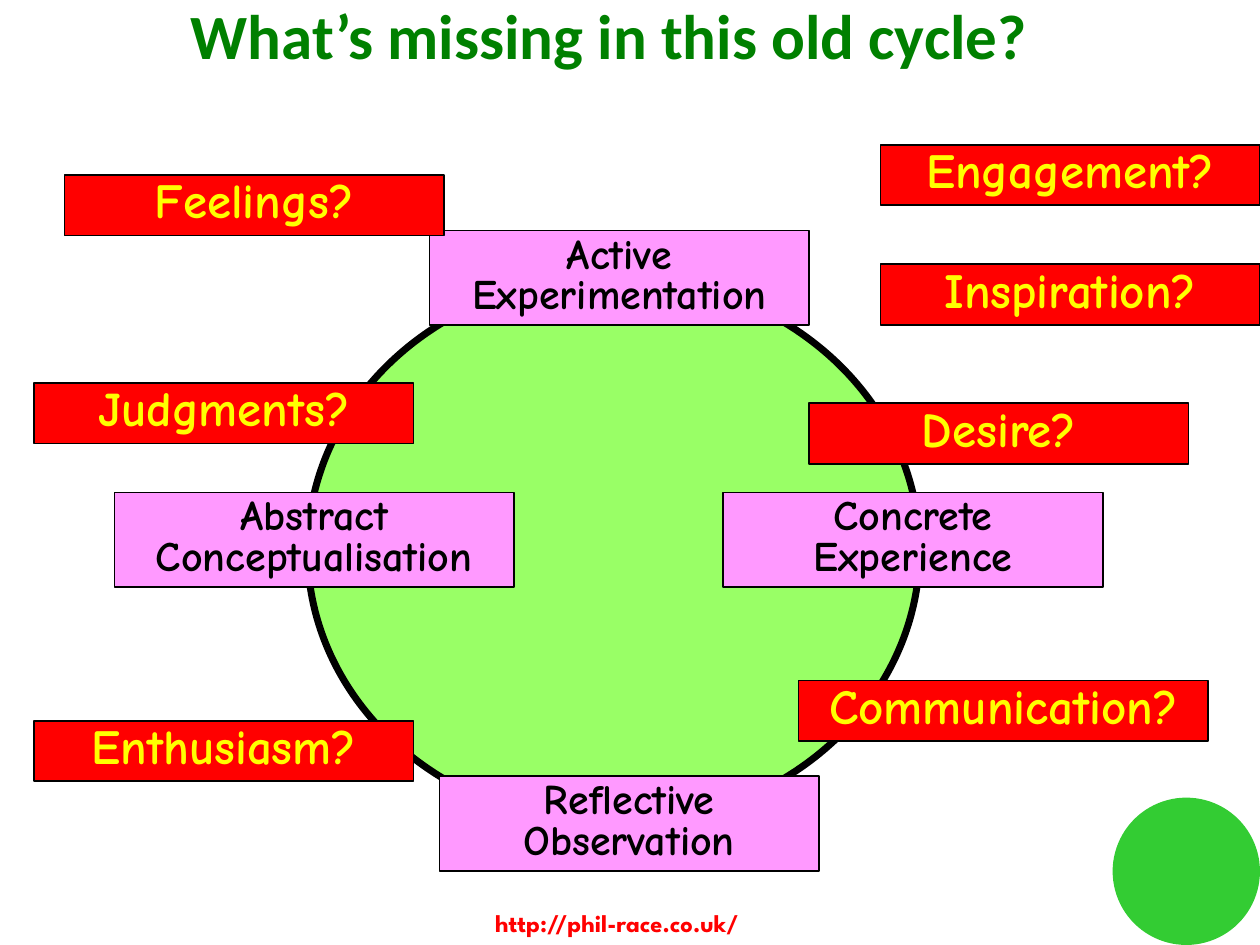
import pptx
import pptx.util
import pptx.dml.color
import pptx.enum.shapes
import pptx.enum.text
from dataclasses import dataclass

Cm, Pt = pptx.util.Cm, pptx.util.Pt
RGB = pptx.dml.color.RGBColor.from_string
MSO = pptx.enum.shapes.MSO_SHAPE
ALIGN = pptx.enum.text.PP_ALIGN
ANCHOR = pptx.enum.text.MSO_ANCHOR
AUTO = pptx.enum.text.MSO_AUTO_SIZE


@dataclass
class Theme:
    title: str = "008000"
    cycle: str = "99FF66"
    stage: str = "FF99FF"
    missing: str = "FF0000"
    missing_text: str = "FFFF00"
    ink: str = "000000"
    emblem: str = "33CC33"
    title_font: str = "Calibri"
    body_font: str = "Comic Neue"
    link_font: str = "League Spartan"
    title_size: int = 36
    missing_size: int = 28
    stage_size: int = 24
    link_size: int = 14


T = Theme()


def add_run(p, text, font, size, color):
    r = p.add_run()
    r.text = text
    r.font.name = font
    r.font.size = Pt(size)
    r.font.bold = True
    r.font.color.rgb = RGB(color)


def add_solid(s, kind, x, y, w, h, fill, line):
    sp = s.shapes.add_shape(kind, Cm(x), Cm(y), Cm(w), Cm(h))
    sp.shadow.inherit = False
    sp.fill.solid()
    sp.fill.fore_color.rgb = RGB(fill)
    if line:
        sp.line.color.rgb = RGB(T.ink)
        sp.line.width = Pt(line)
    else:
        sp.line.fill.background()
    return sp


prs = pptx.Presentation()
prs.slide_width, prs.slide_height = Cm(25.4), Cm(19.05)
s = prs.slides.add_slide(prs.slide_layouts[5])

add_solid(s, MSO.OVAL, 22.43, 16.08, 2.97, 2.97, T.emblem, 0)

sp = s.shapes.add_textbox(Cm(9.73), Cm(18.19), Cm(7.34), Cm(0.86))
tf = sp.text_frame
tf.word_wrap = True
tf.auto_size = AUTO.SHAPE_TO_FIT_TEXT
add_run(tf.paragraphs[0], "http://phil-race.co.uk/", T.link_font, T.link_size, T.missing)

sp = s.shapes.title
sp.left, sp.top, sp.width, sp.height = Cm(1.5), Cm(-0.69), Cm(21.56), Cm(3.02)
tf = sp.text_frame
tf.word_wrap = True
tf.auto_size = AUTO.NONE
tf.vertical_anchor = ANCHOR.MIDDLE
p = tf.paragraphs[0]
p.alignment = ALIGN.CENTER
p.line_spacing = 0.85
add_run(p, "What’s missing in this old cycle?", T.title_font, T.title_size, T.title)

add_solid(s, MSO.OVAL, 6.2, 5.56, 12.34, 11.07, T.cycle, 4)

stages = [
    (["Active", "Experimentation"], 8.66, 4.65, 7.65),
    (["Concrete", "Experience"], 14.58, 9.93, 7.65),
    (["Reflective", "Observation"], 8.86, 15.65, 7.65),
    (["Abstract", "Conceptualisation"], 2.31, 9.93, 8.05),
]
missing = [
    (["Feelings?"], 1.3, 3.53, 7.65),
    (["Inspiration?"], 17.75, 5.33, 7.65),
    (["Enthusiasm?"], 0.69, 14.53, 7.65),
    (["Communication?"], 16.1, 13.72, 8.26),
    (["Judgments?"], 0.69, 7.72, 7.65),
    (["Desire?"], 16.31, 8.13, 7.65),
    (["Engagement?"], 17.75, 2.92, 7.65),
]
groups = [
    (stages, 1.91, T.stage, T.ink, T.stage_size),
    (missing, 1.22, T.missing, T.missing_text, T.missing_size),
]
for boxes, h, fill, color, size in groups:
    for lines, x, y, w in boxes:
        sp = add_solid(s, MSO.RECTANGLE, x, y, w, h, fill, 1)
        tf = sp.text_frame
        tf.word_wrap = True
        tf.auto_size = AUTO.SHAPE_TO_FIT_TEXT
        tf.vertical_anchor = ANCHOR.TOP
        for i, text in enumerate(lines):
            p = tf.add_paragraph() if i else tf.paragraphs[0]
            p.alignment = ALIGN.CENTER
            p.line_spacing = 0.8
            add_run(p, text, T.body_font, size, color)

prs.save("out.pptx")
